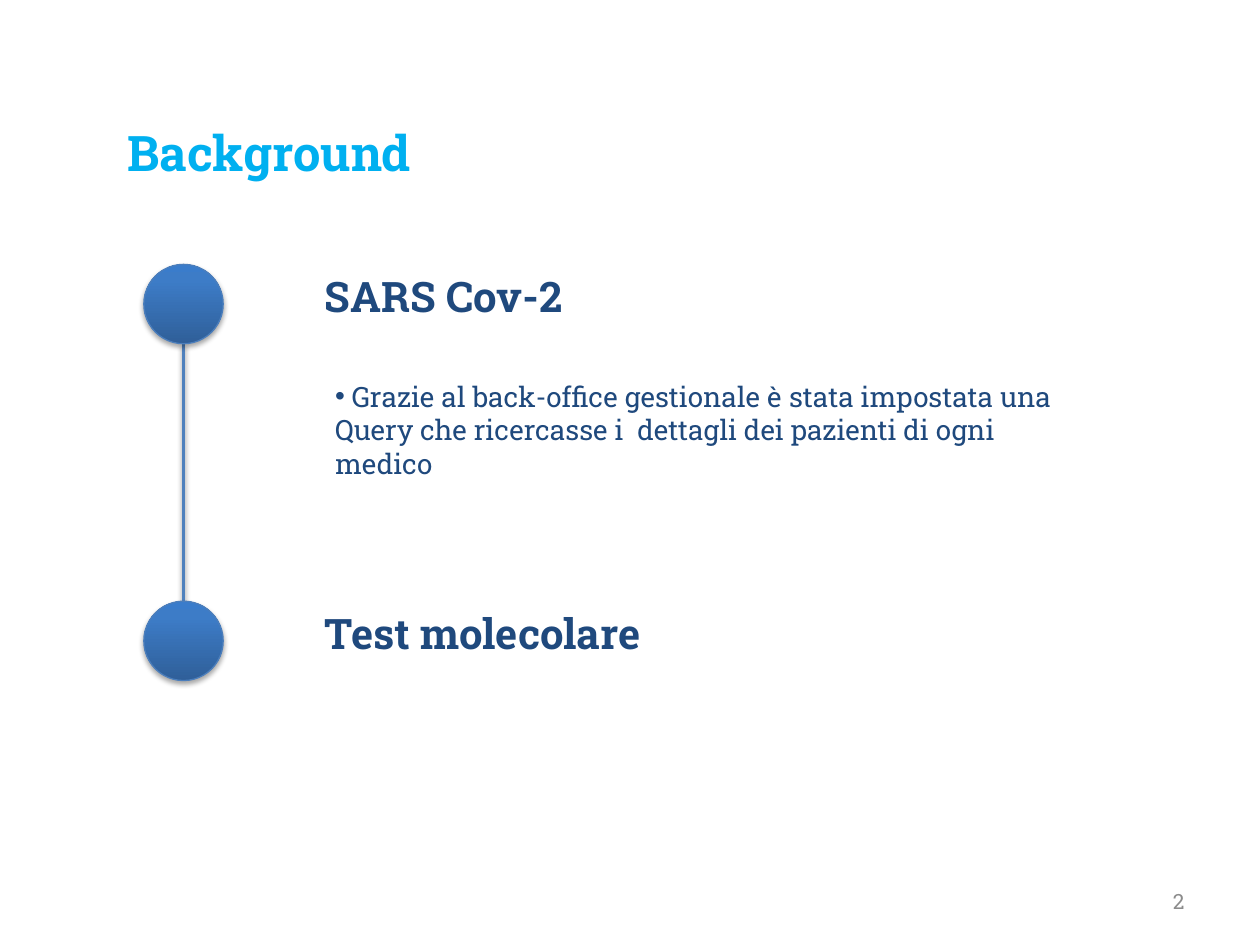
"""Build the Background slide with its two-step timeline."""
from dataclasses import dataclass

from lxml.etree import SubElement as Sub
from pptx import Presentation
from pptx.dml.color import RGBColor
from pptx.enum.shapes import MSO_CONNECTOR as Link, MSO_SHAPE as Shape
from pptx.enum.text import MSO_ANCHOR as Anchor, MSO_AUTO_SIZE as Fit, PP_ALIGN as Align
from pptx.oxml import parse_xml
from pptx.oxml.ns import nsdecls, qn
from pptx.util import Cm, Pt

FONT = "Roboto Slab"
CYAN = RGBColor(0x00, 0xB0, 0xF0)
NAVY = RGBColor(0x1F, 0x49, 0x7D)
GREY = RGBColor(0x8C, 0x8C, 0x8C)
EDGE = RGBColor(0x4B, 0x7E, 0xBC)
BLUE = RGBColor(0x4F, 0x81, 0xBD)
STOPS = (
    (0, RGBColor(0x2F, 0x5F, 0x99)),
    (80, RGBColor(0x3D, 0x7C, 0xC7)),
    (100, RGBColor(0x3A, 0x7C, 0xCB)),
)
DOT_X, DOT = 2.9, 1.6


@dataclass
class Box:
    left: float
    top: float
    width: float
    height: float


@dataclass
class Step:
    name: str
    top: float
    width: float


STEPS = (Step("SARS Cov-2", 5.33, 16.2), Step("Test molecolare", 12.12, 14.8))


def place(shape, box: Box) -> None:
    """Move and size a shape."""
    shape.left, shape.top = Cm(box.left), Cm(box.top)
    shape.width, shape.height = Cm(box.width), Cm(box.height)


def write(shape, text: str, size: int, color: RGBColor, bold=False,
          align=Align.LEFT, anchor=Anchor.TOP, fit=Fit.SHAPE_TO_FIT_TEXT,
          bullet=False) -> None:
    """Fill a shape with one formatted paragraph."""
    frame = shape.text_frame
    frame.text = text
    frame.word_wrap, frame.auto_size = True, fit
    frame.vertical_anchor = anchor
    para = frame.paragraphs[0]
    para.alignment, para.space_before = align, Pt(0)
    if bullet:
        props = para._p.get_or_add_pPr()
        props.set("marL", "0")
        props.set("indent", "0")
        Sub(props, qn("a:buChar"), char="•")
    font = para.runs[0].font
    font.name, font.size, font.bold = FONT, Pt(size), bold
    font.color.rgb = color


def shade(shape, dist: float, alpha: int) -> None:
    """Cast a soft shadow straight down."""
    shape._element.spPr.append(parse_xml(
        f'<a:effectLst {nsdecls("a")}><a:outerShdw blurRad="{Pt(3.1)}" '
        f'dist="{Pt(dist)}" dir="5400000" rotWithShape="0"><a:srgbClr val="000000">'
        f'<a:alpha val="{alpha * 1000}"/></a:srgbClr></a:outerShdw></a:effectLst>'))


def add_dot(slide, top: float) -> None:
    """Draw a shaded timeline dot."""
    dot = slide.shapes.add_shape(Shape.OVAL, Cm(DOT_X), Cm(top), Cm(DOT), Cm(DOT))
    dot.fill.gradient()
    dot.fill.gradient_angle = 90
    stops = dot._element.spPr.find(".//" + qn("a:gsLst"))
    for old in list(stops):
        stops.remove(old)
    for pos, color in STOPS:
        stop = Sub(stops, qn("a:gs"), pos=str(pos * 1000))
        Sub(stop, qn("a:srgbClr"), val=str(color))
    dot.line.color.rgb, dot.line.width = EDGE, Pt(0.75)
    shade(dot, 1.8, 35)


def add_text(slide, box: Box, text: str, size: int, color: RGBColor, **style) -> None:
    """Add a text box."""
    shape = slide.shapes.add_textbox(0, 0, 0, 0)
    place(shape, box)
    write(shape, text, size, color, **style)


def add_line(slide, start: float, end: float) -> None:
    """Link the dots with an upright line."""
    mid = Cm(DOT_X + DOT / 2)
    line = slide.shapes.add_connector(Link.STRAIGHT, mid, Cm(start), mid, Cm(end))
    line.line.color.rgb, line.line.width = BLUE, Pt(2)
    shade(line, 1.6, 38)


def main() -> None:
    """Build and save the deck."""
    deck = Presentation()
    deck.slide_width, deck.slide_height = Cm(25.4), Cm(19.05)
    slide = deck.slides.add_slide(deck.slide_layouts[1])
    title, body = slide.placeholders
    place(title, Box(2.31, 2.34, 19, 1.45))
    write(title, "Background", 28, CYAN, bold=True)
    place(body, Box(6.5, 7.52, 15.8, 1.63))
    write(body, " Grazie al back-office gestionale è stata impostata una "
          "Query che ricercasse i  dettagli dei pazienti di ogni medico",
          16, NAVY, bullet=True)
    first, last = STEPS
    add_line(slide, first.top + DOT, last.top)
    for step in STEPS:
        add_dot(slide, step.top)
        add_text(slide, Box(6.3, step.top, step.width, 1.27), step.name, 24, NAVY, bold=True)
    add_text(slide, Box(18.21, 17.65, 5.92, 1.02), "2", 12, GREY,
             align=Align.RIGHT, anchor=Anchor.MIDDLE, fit=Fit.NONE)
    deck.save("out.pptx")


if __name__ == "__main__":
    main()
